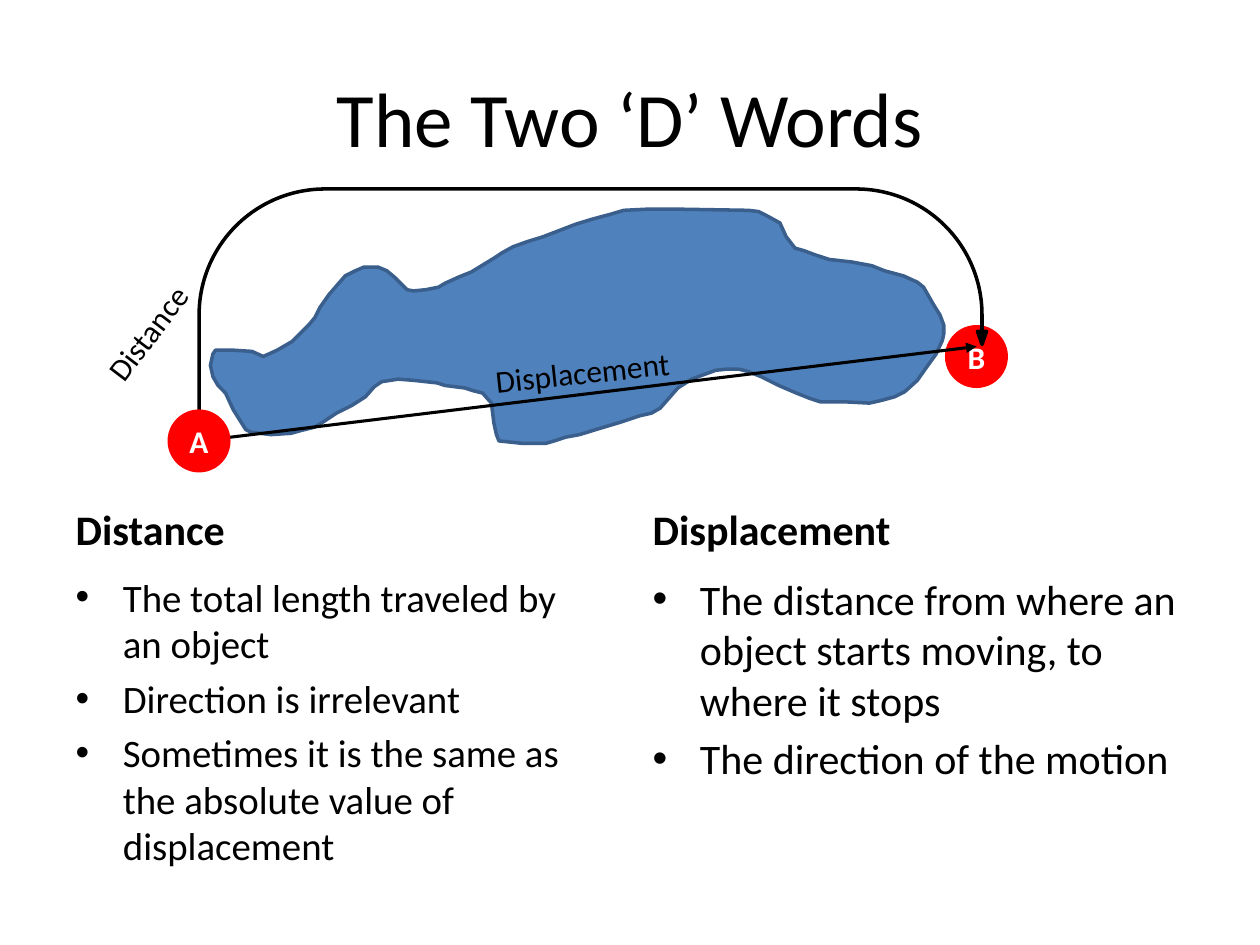
import pptx
import pptx.util
import pptx.dml.color
import pptx.enum.shapes
import pptx.enum.text
import pptx.oxml.ns
import lxml.etree

WIDTH, HEIGHT = 10, 7.5
MARGIN = 0.05 * WIDTH
COLUMN_LEFTS = (MARGIN, 5.08)
HEADING_TOP, LIST_TOP = HEIGHT / 2, 0.6 * HEIGHT
DOT_SIZE = 0.05 * WIDTH
FONT = "Calibri"
BLACK, WHITE, RED = "000000", "FFFFFF", "FF0000"
LAKE_FILL, LAKE_EDGE = "4F81BD", "3A5F8C"

# Heading, list items, list width and list text size of each column
COLUMNS = [
    ("Distance",
     ["The total length traveled by an object",
      "Direction is irrelevant",
      "Sometimes it is the same as the absolute value of displacement"],
     4.17, 22.2),
    ("Displacement",
     ["The distance from where an object starts moving, to where it stops",
      "The direction of the motion"],
     4.42, 24),
]

# Shore of the lake, clockwise, in hundredths of an inch
SHORE = [
    (209, 283), (220, 278), (232, 271), (245, 258), (250, 252), (254, 244),
    (261, 234), (267, 227), (274, 219), (282, 215), (289, 212), (300, 212),
    (307, 215), (313, 220), (318, 225), (323, 230), (328, 231), (338, 230),
    (348, 228), (353, 225), (364, 220), (374, 216), (392, 205), (398, 201),
    (407, 196), (418, 192), (431, 188), (444, 183), (457, 178), (470, 174),
    (485, 170), (495, 167), (515, 166), (535, 166), (594, 167), (602, 168),
    (608, 171), (619, 177), (624, 188), (631, 197), (638, 199), (646, 202),
    (658, 206), (676, 208), (692, 211), (702, 215), (717, 219), (728, 224),
    (733, 228), (741, 242), (746, 250), (749, 258), (749, 265), (748, 270),
    (743, 281), (735, 292), (728, 302), (718, 311), (710, 315), (699, 318),
    (690, 320), (670, 319), (651, 319), (642, 316), (632, 312), (618, 306),
    (604, 299), (594, 295), (586, 293), (577, 293), (568, 294), (557, 298),
    (549, 301), (538, 308), (531, 316), (524, 324), (517, 328), (508, 330),
    (493, 335), (473, 341), (460, 345), (449, 347), (440, 350), (433, 352),
    (415, 352), (396, 350), (394, 345), (392, 336), (390, 320), (383, 312),
    (375, 310), (369, 308), (353, 306), (347, 304), (329, 302), (316, 301),
    (303, 303), (297, 307), (290, 315), (279, 322), (267, 328), (258, 334),
    (250, 339), (238, 342), (231, 344), (215, 345), (199, 343), (195, 341),
    (190, 333), (185, 325), (179, 312), (173, 306), (169, 299), (167, 290),
    (169, 281), (171, 278), (185, 278), (200, 279),
]


def inches(*lengths):
    return [pptx.util.Inches(length) for length in lengths]


def color(hex_value):
    return pptx.dml.color.RGBColor.from_string(hex_value)


def paint(shape, fill, edge=None):
    """Give a shape a flat fill and an optional 2 pt outline."""
    shape.shadow.inherit = False
    shape.fill.solid()
    shape.fill.fore_color.rgb = color(fill)
    if edge:
        shape.line.color.rgb = color(edge)
        shape.line.width = pptx.util.Pt(2)
    else:
        shape.line.fill.background()


def write(shape, lines, size, hex_value=BLACK, bold=False, align=None):
    frame = shape.text_frame
    frame.text = "\n".join(lines)
    for para in frame.paragraphs:
        para.alignment = align
        para.font.name = FONT
        para.font.size = pptx.util.Pt(size)
        para.font.bold = bold
        para.font.color.rgb = color(hex_value)


def fill_placeholder(box, place, lines, size, **style):
    box.left, box.top, box.width, box.height = inches(*place)
    write(box, lines, size, **style)
    box.text_frame.auto_size = pptx.enum.text.MSO_AUTO_SIZE.NONE


def add_dot(page, letter, left, top):
    dot = page.shapes.add_shape(pptx.enum.shapes.MSO_SHAPE.OVAL,
                                *inches(left, top, DOT_SIZE, DOT_SIZE))
    paint(dot, RED)
    write(dot, [letter], 18, WHITE, True, pptx.enum.text.PP_ALIGN.CENTER)
    dot.text_frame.vertical_anchor = pptx.enum.text.MSO_ANCHOR.MIDDLE
    dot.text_frame.word_wrap = True


def add_lake(page):
    builder = page.shapes.build_freeform(*SHORE[0], scale=pptx.util.Inches(0.01))
    builder.add_line_segments(SHORE[1:], close=True)
    paint(builder.convert_to_shape(), LAKE_FILL, LAKE_EDGE)


def add_route(page):
    """Draw the way around the lake as a thin U-turn arrow."""
    route = page.shapes.add_shape(pptx.enum.shapes.MSO_SHAPE.U_TURN_ARROW,
                                  *inches(1.58, 1.5, 6.25, 2))
    for index, share in enumerate((0, 0.018, 0.052, 0.5, 0.617)):
        route.adjustments[index] = share
    paint(route, BLACK, BLACK)


def add_arrow(page, start, end):
    arrow = page.shapes.add_connector(pptx.enum.shapes.MSO_CONNECTOR.STRAIGHT,
                                      *inches(*start, *end))
    arrow.line.color.rgb = color(BLACK)
    arrow.line.width = pptx.util.Pt(1.75)
    qn = pptx.oxml.ns.qn
    lxml.etree.SubElement(arrow.line._get_or_add_ln(), qn("a:tailEnd"), type="triangle")
    lxml.etree.SubElement(arrow._element.spPr, qn("a:effectLst"))


def add_label(page, words, place, rotation):
    label = page.shapes.add_textbox(*inches(*place))
    label.rotation = rotation
    write(label, [words], 18)
    label.text_frame.word_wrap = False
    label.text_frame.auto_size = pptx.enum.text.MSO_AUTO_SIZE.SHAPE_TO_FIT_TEXT


def main():
    deck = pptx.Presentation()
    deck.slide_width, deck.slide_height = inches(WIDTH, HEIGHT)
    page = deck.slides.add_slide(deck.slide_layouts.get_by_name("Comparison"))
    title, *bodies = page.placeholders

    # Title and the two text columns
    fill_placeholder(title, (MARGIN, 0.3, WIDTH - 2 * MARGIN, 1.25),
                     ["The Two ‘D’ Words"], 44,
                     align=pptx.enum.text.PP_ALIGN.CENTER)
    for column, (heading, items, width, size) in enumerate(COLUMNS):
        left = COLUMN_LEFTS[column]
        heading_box, list_box = bodies[2 * column:2 * column + 2]
        fill_placeholder(heading_box, (left, HEADING_TOP, 4.42, 0.7),
                         [heading], 24, bold=True)
        fill_placeholder(list_box, (left, LIST_TOP, width, 2.2), items, size)

    # Diagram, from back to front
    add_dot(page, "B", 7.5, 2.58)
    add_lake(page)
    add_route(page)
    add_arrow(page, (1.58, 3.5), (7.75, 2.75))
    add_dot(page, "A", 1.33, 3.25)
    add_label(page, "Distance", (1.33, 1.12, 3.03, 3.12), 307.2)
    add_label(page, "Displacement", (3.83, 2.75, 1.6, 0.4), 353.7)

    deck.save("out.pptx")


if __name__ == "__main__":
    main()
